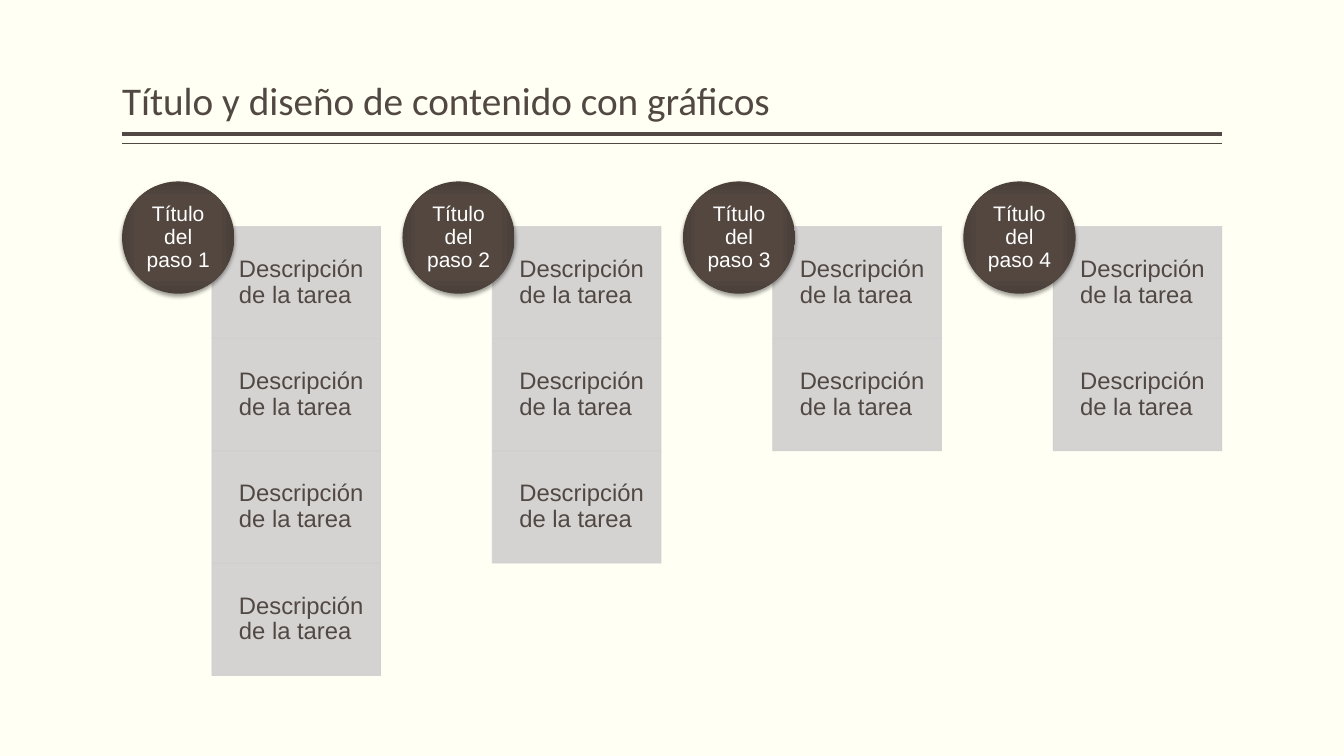
"""Build a slide with four steps and their tasks."""
from lxml.etree import SubElement
from pptx import Presentation
from pptx.dml.color import RGBColor
from pptx.enum.shapes import MSO_CONNECTOR, MSO_SHAPE
from pptx.enum.text import MSO_ANCHOR, PP_ALIGN
from pptx.oxml import parse_xml
from pptx.oxml.ns import nsdecls, qn
from pptx.util import Pt

TITLE = "Título y diseño de contenido con gráficos"
TASK = "Descripción de la tarea"
STEPS = [
    ("Título del paso 1", [TASK] * 4),
    ("Título del paso 2", [TASK] * 3),
    ("Título del paso 3", [TASK] * 2),
    ("Título del paso 4", [TASK] * 2),
]
RULES = [(95.6, 3), (102.4, 1)]

CREAM = RGBColor(0xFF, 0xFF, 0xF3)
BROWN = RGBColor(0x51, 0x48, 0x43)
GRAY = RGBColor(0xD0, 0xCF, 0xCF)
WHITE = RGBColor(0xFF, 0xFF, 0xFF)
GRADIENT = [
    (0, RGBColor(0x54, 0x47, 0x40)),
    (71, RGBColor(0x53, 0x47, 0x40)),
    (100, RGBColor(0x4A, 0x3F, 0x39)),
]

LEFT, WIDTH = 87.2, 785.8
CIRCLE_TOP, CIRCLE = 129.6, 80.2
PITCH = 200.3
TASK_WIDTH, TASK_HEIGHT = 120.5, 80.2
TASK_SHIFT, TASK_DROP = 0.8 * CIRCLE, 0.4 * CIRCLE


def set_text(shape, text, font, size, color, align, anchor, insets):
    frame = shape.text_frame
    frame.text = text
    frame.word_wrap = True
    frame.vertical_anchor = anchor
    frame.margin_left, frame.margin_top, frame.margin_right, frame.margin_bottom = map(Pt, insets)
    para = frame.paragraphs[0]
    para.alignment = align
    para.line_spacing = 0.9
    span = para.runs[0]
    span.font.name = font
    span.font.size = Pt(size)
    span.font.color.rgb = color


def add_rule(slide, top, weight):
    rule = slide.shapes.add_connector(
        MSO_CONNECTOR.STRAIGHT, Pt(LEFT), Pt(top), Pt(LEFT + WIDTH), Pt(top))
    rule.line.color.rgb = BROWN
    rule.line.width = Pt(weight)
    SubElement(rule._element.spPr, qn("a:effectLst"))


def add_task(slide, left, top, text):
    box = slide.shapes.add_shape(
        MSO_SHAPE.RECTANGLE, Pt(left), Pt(top), Pt(TASK_WIDTH), Pt(TASK_HEIGHT))
    box.shadow.inherit = False
    box.fill.solid()
    box.fill.fore_color.rgb = GRAY
    box.line.color.rgb = GRAY
    box.line.width = Pt(0.5)
    for color in box._element.spPr.iter(qn("a:srgbClr")):
        SubElement(color, qn("a:alpha"), val="90000")
    set_text(box, text, "Arial", 17, BROWN, PP_ALIGN.LEFT, MSO_ANCHOR.MIDDLE,
             (19.3, 9.4, 9.2, 9.4))


def add_step_circle(slide, left, text):
    circle = slide.shapes.add_shape(
        MSO_SHAPE.OVAL, Pt(left), Pt(CIRCLE_TOP), Pt(CIRCLE), Pt(CIRCLE))
    circle.shadow.inherit = False
    circle.line.fill.background()
    properties = circle._element.spPr
    stops = "".join(
        f'<a:gs pos="{position * 1000}"><a:srgbClr val="{color}"/></a:gs>'
        for position, color in GRADIENT)
    properties.find(qn("a:prstGeom")).addnext(parse_xml(
        f'<a:gradFill {nsdecls("a")} rotWithShape="1"><a:gsLst>{stops}</a:gsLst>'
        '<a:path path="rect"><a:fillToRect l="50000" t="50000" r="50000" b="50000"/>'
        '</a:path></a:gradFill>'))
    properties.find(qn("a:effectLst")).append(parse_xml(
        f'<a:outerShdw {nsdecls("a")} blurRad="{Pt(3.1)}" dist="{Pt(2)}" dir="5400000" '
        'rotWithShape="0"><a:srgbClr val="000000"><a:alpha val="38000"/></a:srgbClr>'
        '</a:outerShdw>'))
    set_text(circle, text, "Arial", 15, WHITE, PP_ALIGN.CENTER, MSO_ANCHOR.MIDDLE,
             (2, 0, 2, 0))


def main():
    deck = Presentation()
    deck.slide_width, deck.slide_height = Pt(960), Pt(540)
    page = deck.slides.add_slide(deck.slide_layouts[5])
    page.background.fill.solid()
    page.background.fill.fore_color.rgb = CREAM

    for top, weight in RULES:
        add_rule(page, top, weight)

    title = page.shapes.title
    title.left, title.top, title.width, title.height = Pt(LEFT), Pt(5.8), Pt(WIDTH), Pt(86.4)
    set_text(title, TITLE, "Calibri", 28, BROWN, PP_ALIGN.LEFT, MSO_ANCHOR.BOTTOM,
             (0, 3.6, 0, 3.6))

    for column, (step, tasks) in enumerate(STEPS):
        left = LEFT + column * PITCH
        for row, task in enumerate(tasks):
            add_task(page, left + TASK_SHIFT, CIRCLE_TOP + TASK_DROP + row * TASK_HEIGHT, task)
        add_step_circle(page, left, step)

    deck.save("out.pptx")


if __name__ == "__main__":
    main()
